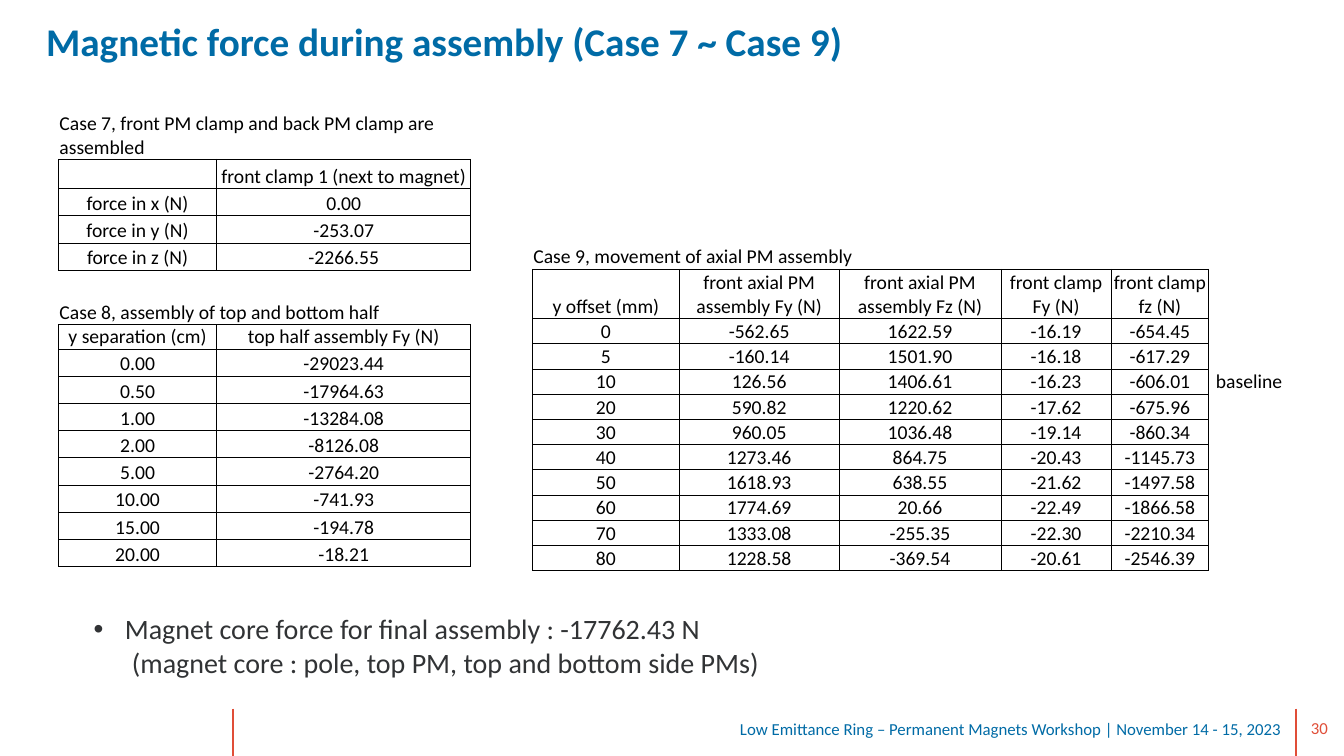
from pptx import Presentation
from pptx.dml.color import RGBColor
from pptx.enum.shapes import MSO_CONNECTOR
from pptx.enum.text import MSO_ANCHOR, PP_ALIGN
from pptx.oxml.ns import qn
from pptx.util import Inches, Pt
from lxml.etree import SubElement

BLUE = RGBColor(0x00, 0x6B, 0xA6)
RED = RGBColor(0xE0, 0x4E, 0x38)
GREY = RGBColor(0x31, 0x33, 0x35)
BLACK = RGBColor(0x00, 0x00, 0x00)
FONT = "Calibri"
NO_GRID_STYLE = "{2D5ABB26-0587-4C30-8999-92F81FD0307C}"

CLAMP_ROWS = [
    ["Case 7, front PM clamp and back PM clamp are assembled", ""],
    ["", "front clamp 1 (next to magnet)"],
    ["force in x (N)", "0.00"],
    ["force in y (N)", "-253.07"],
    ["force in z (N)", "-2266.55"],
    ["", ""],
    ["Case 8, assembly of top and bottom half", ""],
    ["y separation (cm)", "top half assembly Fy (N)"],
    ["0.00", "-29023.44"],
    ["0.50", "-17964.63"],
    ["1.00", "-13284.08"],
    ["2.00", "-8126.08"],
    ["5.00", "-2764.20"],
    ["10.00", "-741.93"],
    ["15.00", "-194.78"],
    ["20.00", "-18.21"],
]

AXIAL_ROWS = [
    ["Case 9, movement of axial PM assembly", "", "", "", "", ""],
    ["y offset (mm)", "front axial PM assembly Fy (N)", "front axial PM assembly Fz (N)",
     "front clamp Fy (N)", "front clamp fz (N)", ""],
    ["0", "-562.65", "1622.59", "-16.19", "-654.45", ""],
    ["5", "-160.14", "1501.90", "-16.18", "-617.29", ""],
    ["10", "126.56", "1406.61", "-16.23", "-606.01", "baseline"],
    ["20", "590.82", "1220.62", "-17.62", "-675.96", ""],
    ["30", "960.05", "1036.48", "-19.14", "-860.34", ""],
    ["40", "1273.46", "864.75", "-20.43", "-1145.73", ""],
    ["50", "1618.93", "638.55", "-21.62", "-1497.58", ""],
    ["60", "1774.69", "20.66", "-22.49", "-1866.58", ""],
    ["70", "1333.08", "-255.35", "-22.30", "-2210.34", ""],
    ["80", "1228.58", "-369.54", "-20.61", "-2546.39", ""],
]


def add_run(paragraph, text, size, color, bold=False):
    run = paragraph.add_run()
    run.text = text
    run.font.name = FONT
    run.font.size = Pt(size)
    run.font.bold = bold
    run.font.color.rgb = color


def add_text_box(slide, left, top, width, height, anchor=MSO_ANCHOR.TOP,
                 margin_top=0.05, margin_bottom=0.05, wrap=True):
    box = slide.shapes.add_textbox(Inches(left), Inches(top), Inches(width), Inches(height))
    frame = box.text_frame
    frame.word_wrap = wrap
    frame.vertical_anchor = anchor
    frame.margin_top = Inches(margin_top)
    frame.margin_bottom = Inches(margin_bottom)
    return frame


def add_footer_rule(slide, x):
    rule = slide.shapes.add_connector(MSO_CONNECTOR.STRAIGHT, Inches(x), Inches(7.03),
                                      Inches(x), Inches(7.5))
    rule.line.color.rgb = RED
    rule.line.width = Pt(1.5)
    SubElement(rule._element.spPr, qn("a:effectLst"))


def add_borders(cell):
    properties = cell._tc.get_or_add_tcPr()
    for side in ("lnL", "lnR", "lnT", "lnB"):
        line = SubElement(properties, qn(f"a:{side}"), w=str(Pt(0.5)))
        fill = SubElement(line, qn("a:solidFill"))
        SubElement(fill, qn("a:srgbClr"), val=str(BLACK))


def fill_cell(cell, text, is_caption, bordered):
    cell.margin_left = cell.margin_right = cell.margin_top = Inches(0.01)
    cell.margin_bottom = 0
    cell.vertical_anchor = MSO_ANCHOR.BOTTOM
    if bordered:
        add_borders(cell)
    cell.fill.background()
    paragraph = cell.text_frame.paragraphs[0]
    if text:
        paragraph.alignment = PP_ALIGN.LEFT if is_caption else PP_ALIGN.CENTER
        add_run(paragraph, text, 14, BLACK)
    else:
        # Keeps an empty row from growing
        SubElement(paragraph._p, qn("a:endParaRPr"), sz="1400")


def add_force_table(slide, left, top, rows, widths, heights, caption_span, open_rows, grid_columns):
    frame = slide.shapes.add_table(len(rows), len(widths), Inches(left), Inches(top),
                                   Inches(sum(widths)), Inches(sum(heights)))
    table = frame.table
    table.first_row = False
    table.horz_banding = False
    table._tbl.tblPr.find(qn("a:tableStyleId")).text = NO_GRID_STYLE
    for column, width in zip(table.columns, widths):
        column.width = Inches(width)
    for row, height in zip(table.rows, heights):
        row.height = Inches(height)
    for row_index, values in enumerate(rows):
        is_caption = values[0].startswith("Case")
        if is_caption:
            table.cell(row_index, 0).merge(table.cell(row_index, caption_span - 1))
        for column_index, text in enumerate(values):
            bordered = row_index not in open_rows and column_index < grid_columns
            fill_cell(table.cell(row_index, column_index), text, is_caption, bordered)


def add_core_force_note(slide):
    frame = add_text_box(slide, 0.83, 6.02, 6.94, 0.77)
    bullet = frame.paragraphs[0]
    properties = bullet._p.get_or_add_pPr()
    properties.set("marL", str(Inches(0.31)))
    properties.set("indent", str(Inches(-0.31)))
    SubElement(properties, qn("a:buFont"), typeface="Arial")
    SubElement(properties, qn("a:buChar"), char="•")
    add_run(bullet, "Magnet core force for final assembly : -17762.43 N", 20, GREY)
    detail = frame.add_paragraph()
    detail._p.get_or_add_pPr().set("marL", str(Inches(0.38)))
    add_run(detail, "(magnet core : pole, top PM, top and bottom side PMs)", 20, GREY)


def main():
    presentation = Presentation()
    presentation.slide_width = Inches(13.33)
    presentation.slide_height = Inches(7.5)
    slide = presentation.slides.add_slide(presentation.slide_layouts[6])

    # Footer rules
    for x in (12.85, 2.31):
        add_footer_rule(slide, x)

    # Title
    title = add_text_box(slide, 0.36, 0.12, 11.14, 0.57)
    add_run(title.paragraphs[0], "Magnetic force during assembly (Case 7 ~ Case 9)", 28, BLUE, bold=True)

    # Page number
    number = add_text_box(slide, 12.79, 7.05, 0.59, 0.4, MSO_ANCHOR.MIDDLE, margin_bottom=0.1)
    number.paragraphs[0].alignment = PP_ALIGN.CENTER
    add_run(number.paragraphs[0], "30", 12, RED)

    # Force tables
    add_force_table(slide, 0.58, 1.1, CLAMP_ROWS, [1.57, 2.52],
                    [0.48, 0.29] + [0.27] * 5 + [0.24] + [0.27] * 8,
                    caption_span=2, open_rows=(0, 5, 6), grid_columns=2)
    add_force_table(slide, 5.28, 2.42, AXIAL_ROWS, [1.46, 1.58, 1.61, 1.09, 0.97, 0.8],
                    [0.25, 0.49] + [0.25] * 10,
                    caption_span=3, open_rows=(0,), grid_columns=5)

    # Note and footer
    add_core_force_note(slide)
    footer = add_text_box(slide, 7.17, 7.03, 5.64, 0.4, MSO_ANCHOR.MIDDLE, 0.1, 0.1, wrap=False)
    footer.paragraphs[0].alignment = PP_ALIGN.RIGHT
    add_run(footer.paragraphs[0],
            "Low Emittance Ring – Permanent Magnets Workshop | November 14 - 15, 2023", 12, BLUE)

    presentation.save("out.pptx")


if __name__ == "__main__":
    main()
